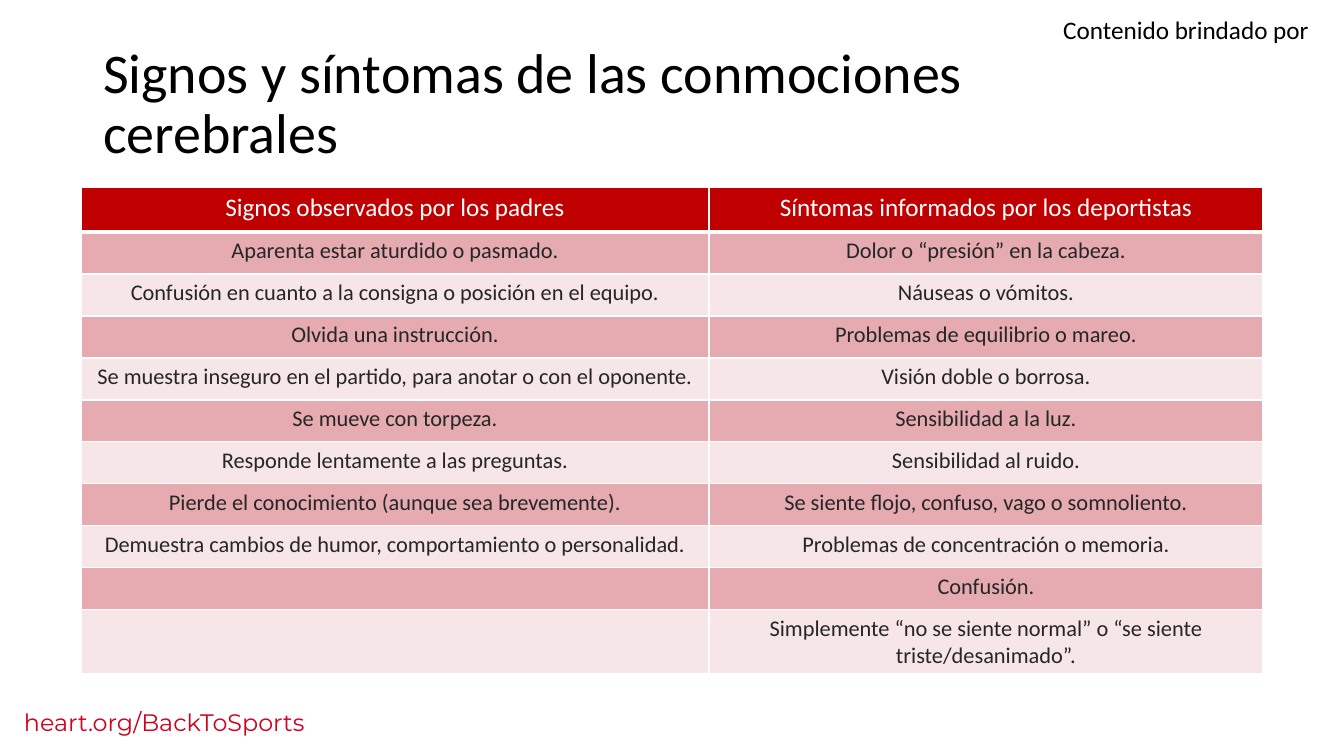
from lxml.etree import SubElement
from pptx import Presentation
from pptx.dml.color import RGBColor
from pptx.enum.text import MSO_ANCHOR, MSO_AUTO_SIZE, PP_ALIGN
from pptx.oxml import parse_xml
from pptx.oxml.ns import nsdecls, qn
from pptx.util import Pt

TITLE = "Signos y síntomas de las conmociones cerebrales"
CREDIT = "Contenido brindado por"
SITE = "heart.org/BackToSports"
ROWS = [
    ("Signos observados por los padres", "Síntomas informados por los deportistas"),
    ("Aparenta estar aturdido o pasmado.", "Dolor o “presión” en la cabeza."),
    ("Confusión en cuanto a la consigna o posición en el equipo.", "Náuseas o vómitos."),
    ("Olvida una instrucción.", "Problemas de equilibrio o mareo."),
    ("Se muestra inseguro en el partido, para anotar o con el oponente.", "Visión doble o borrosa."),
    ("Se mueve con torpeza.", "Sensibilidad a la luz."),
    ("Responde lentamente a las preguntas.", "Sensibilidad al ruido."),
    ("Pierde el conocimiento (aunque sea brevemente).", "Se siente flojo, confuso, vago o somnoliento."),
    ("Demuestra cambios de humor, comportamiento o personalidad.", "Problemas de concentración o memoria."),
    ("", "Confusión."),
    ("", "Simplemente “no se siente normal” o “se siente triste/desanimado”."),
]
WIDTHS = (628, 554)
HEAD, BODY, LAST = 45, 42, 64

BLACK = RGBColor(0x00, 0x00, 0x00)
WHITE = RGBColor(0xFF, 0xFF, 0xFF)
GRAY = RGBColor(0x26, 0x26, 0x26)
RED = RGBColor(0xC0, 0x00, 0x00)
ROSE = RGBColor(0xB6, 0x10, 0x21)
LINK = RGBColor(0xD0, 0x01, 0x1E)


def px(count):
    return round(count * 914400 / 100.8)


def write(frame, text, size, color, font="Calibri", align=PP_ALIGN.LEFT, space=1.0):
    frame.word_wrap = True
    para = frame.paragraphs[0]
    para.alignment = align
    para.line_spacing = space
    para.space_before = Pt(0)
    if not text:
        para.font.size = Pt(size)
        return
    run = para.add_run()
    run.text = text
    run.font.name = font
    run.font.size = Pt(size)
    run.font.bold = False
    run.font.color.rgb = color


def place(shape, box):
    shape.left, shape.top, shape.width, shape.height = map(px, box)


def paint(cell, color, alpha, base):
    cell.fill.solid()
    cell.fill.fore_color.rgb = color
    props = cell._tc.get_or_add_tcPr()
    if alpha < 100:
        tint = props.find(".//" + qn("a:srgbClr"))
        SubElement(tint, qn("a:alpha"), val=str(alpha * 1000))
    for spot, (side, wide) in enumerate(zip("LRTB", (1, 1, 1, base))):
        props.insert(spot, parse_xml(
            f'<a:ln{side} {nsdecls("a")} w="{Pt(wide)}"><a:solidFill>'
            f'<a:srgbClr val="{WHITE}"/></a:solidFill></a:ln{side}>'))


def main():
    deck = Presentation()
    deck.slide_width, deck.slide_height = px(1344), px(756)
    slide = deck.slides.add_slide(deck.slide_layouts[5])

    title = slide.shapes.title
    place(title, (93, 40, 954, 84))
    title.text_frame.auto_size = MSO_AUTO_SIZE.NONE
    title.text_frame.vertical_anchor = MSO_ANCHOR.TOP
    write(title.text_frame, TITLE, 40, BLACK, space=0.9)

    site = slide.shapes.add_textbox(*map(px, (14, 703, 436, 39)))
    write(site.text_frame, SITE, 17, LINK, font="Montserrat")
    credit = slide.shapes.add_textbox(*map(px, (1046, 9, 280, 40)))
    write(credit.text_frame, CREDIT, 18, BLACK, align=PP_ALIGN.CENTER)

    tall = [HEAD] + [BODY] * (len(ROWS) - 2) + [LAST]
    box = (81, 187, sum(WIDTHS), sum(tall))
    table = slide.shapes.add_table(len(ROWS), len(WIDTHS), *map(px, box)).table
    table.horz_banding = False
    for col, wide in zip(table.columns, WIDTHS):
        col.width = px(wide)
    for num, (row, high, texts) in enumerate(zip(table.rows, tall, ROWS)):
        row.height = px(high)
        for cell, text in zip(row.cells, texts):
            if num == 0:
                write(cell.text_frame, text, 18, WHITE, align=PP_ALIGN.CENTER)
                paint(cell, RED, 100, 3)
            else:
                write(cell.text_frame, text, 16, GRAY, align=PP_ALIGN.CENTER)
                paint(cell, ROSE, 35 if num % 2 else 10, 1)

    deck.save("out.pptx")


if __name__ == "__main__":
    main()
